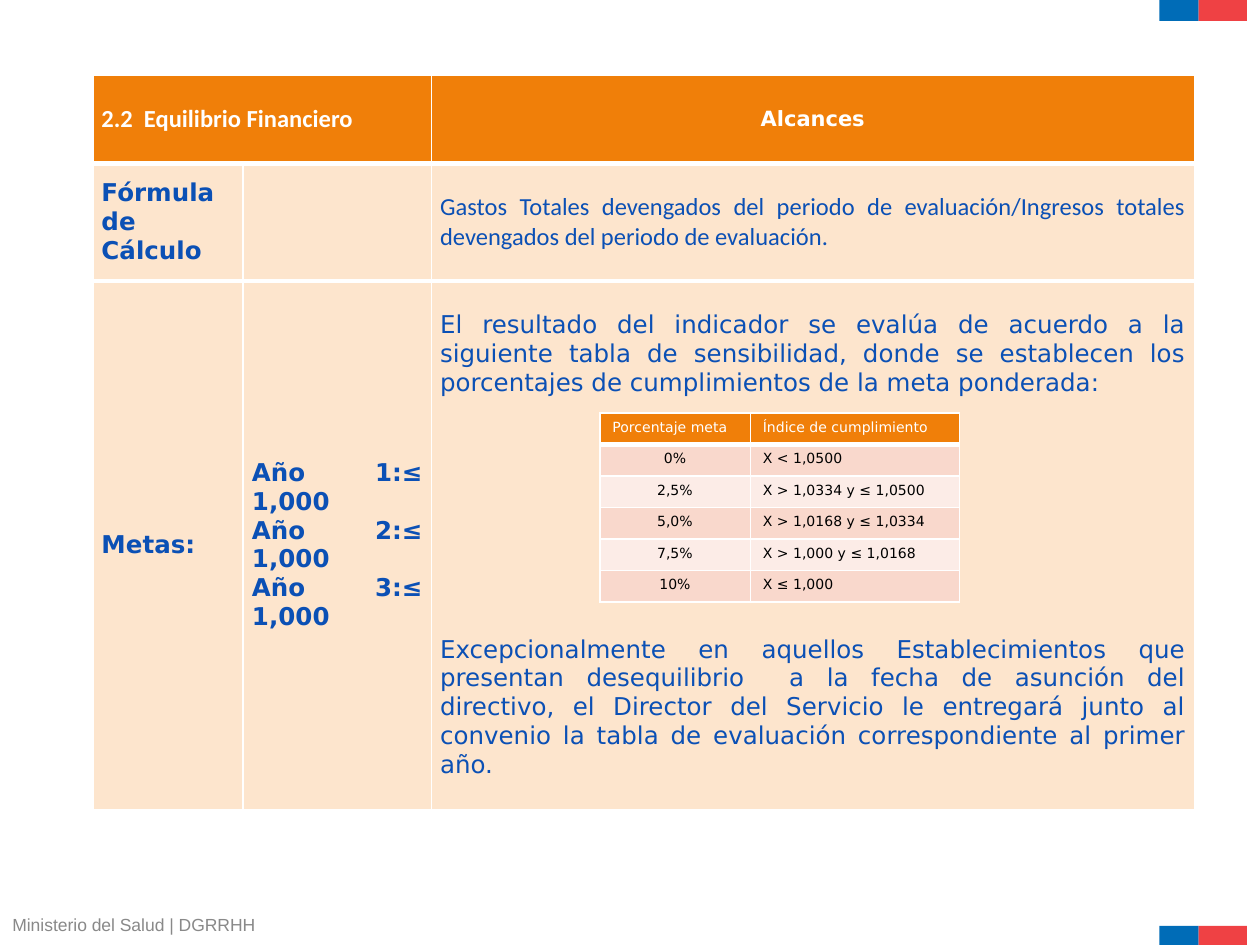
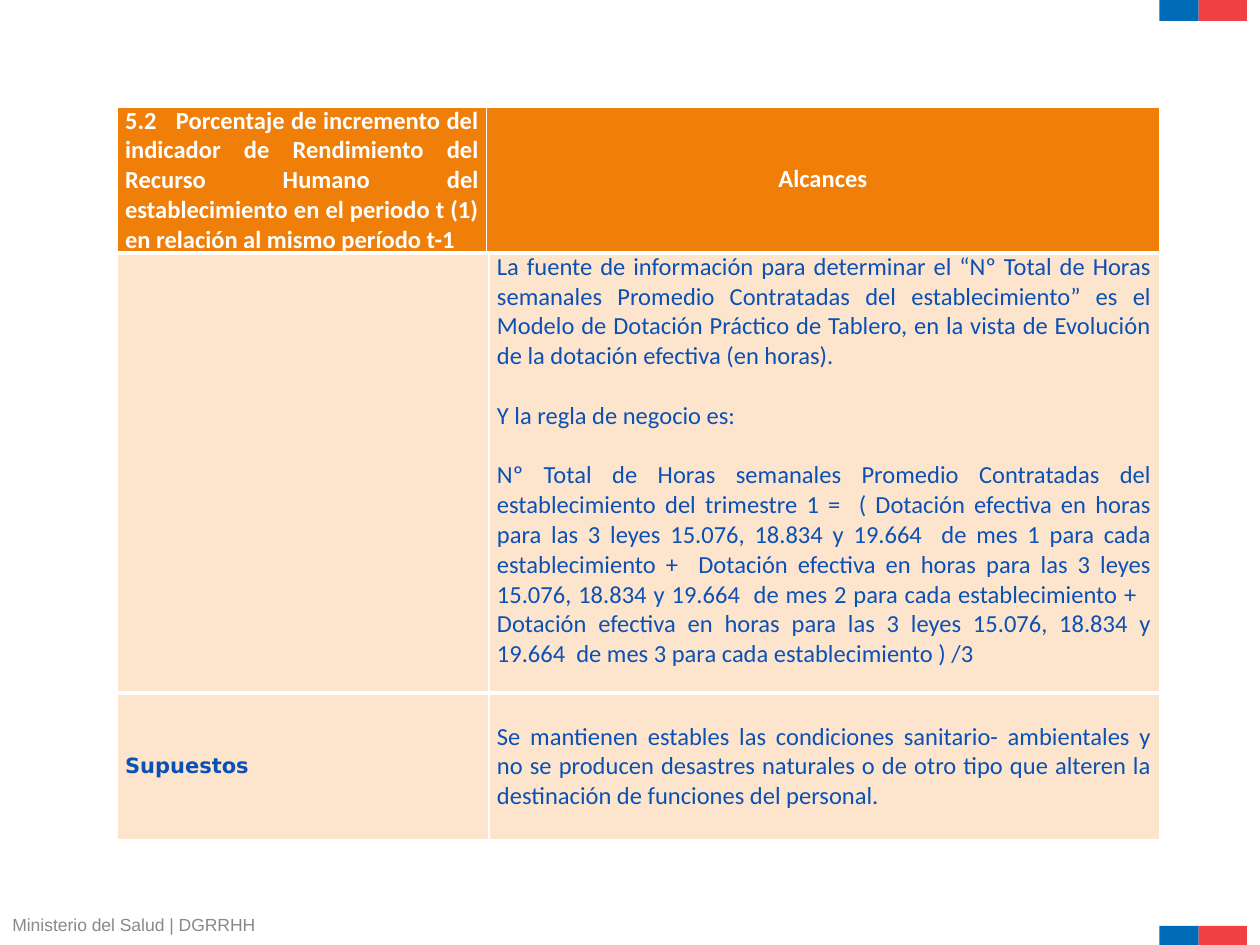
from lxml.etree import SubElement as Sub
from pptx import Presentation as Deck
from pptx.dml.color import RGBColor as Rgb
from pptx.enum.shapes import MSO_SHAPE as Shape
from pptx.enum.text import MSO_ANCHOR as Anchor, PP_ALIGN as Align
from pptx.oxml import parse_xml
from pptx.oxml.ns import nsdecls, qn
from pptx.util import Pt

HUES = {
    "blue": "006CB7", "red": "EF4144", "gray": "898989",
    "head": "F07F09", "cream": "FDE5CD", "ink": "0B50B5",
    "white": "FFFFFF", "black": "000000",
    "rose": "F9D8CC", "blush": "FCECE7",
}
SANS, SERIF = "DejaVu Sans", "Calibri"

# Text styles: font, size, weight, colour and alignment
HEAD = dict(name=SERIF, size=14, bold=True, hue="white", align=Align.LEFT)
BODY = dict(name=SERIF, size=14, bold=False, hue="ink", align=Align.JUSTIFY)
WIDE = BODY | dict(name=SANS)
LABEL = WIDE | dict(bold=True, align=Align.LEFT)
GOAL = LABEL | dict(align=Align.JUSTIFY)
SMALL = dict(name=SANS, size=8, bold=False, hue="black", align=Align.LEFT)
FOOT = dict(name="Arial", size=10, bold=False, hue="gray", align=Align.LEFT)

# Slide 1 wording
FORMULA = ("Gastos Totales devengados del periodo de evaluación/Ingresos "
           "totales devengados del periodo de evaluación.")
SCALE = ("El resultado del indicador se evalúa de acuerdo a la siguiente tabla "
         "de sensibilidad, donde se establecen los porcentajes de "
         "cumplimientos de la meta ponderada:")
EXCEPT = ("Excepcionalmente en aquellos Establecimientos que presentan "
          "desequilibrio  a la fecha de asunción del directivo, el Director "
          "del Servicio le entregará junto al convenio la tabla de evaluación "
          "correspondiente al primer año.")
GOALS = [f"Año {year}:≤ 1,000" for year in (1, 2, 3)]
LEVELS = [
    ("Porcentaje meta", "Índice de cumplimiento"),
    ("0%", "X < 1,0500"),
    ("2,5%", "X > 1,0334 y ≤ 1,0500"),
    ("5,0%", "X > 1,0168 y ≤ 1,0334"),
    ("7,5%", "X > 1,000 y ≤ 1,0168"),
    ("10%", "X ≤ 1,000"),
]

# Slide 2 wording
TOPIC = ("5.2   Porcentaje de incremento del indicador de Rendimiento del "
         "Recurso Humano del establecimiento en el periodo t (1) en relación "
         "al mismo período t-1")
SOURCE = ("La fuente de información para determinar el “Nº Total de Horas "
          "semanales Promedio Contratadas del establecimiento” es el Modelo de "
          "Dotación Práctico de Tablero, en la vista de Evolución de la "
          "dotación efectiva (en horas).")
RULE = "Y la regla de negocio es:"
STAFF = ("Dotación efectiva en horas para las 3 leyes 15.076, 18.834 y 19.664  "
         "de mes {} para cada establecimiento ")
HOURS = ("Nº Total de Horas semanales Promedio Contratadas del establecimiento "
         "del trimestre 1 =  ( " + STAFF.format(1) + "+  " + STAFF.format(2)
         + "+   " + STAFF.format(3) + ") /3")
STABLE = ("Se mantienen estables las condiciones sanitario- ambientales y no se "
          "producen desastres naturales o de otro tipo que alteren la "
          "destinación de funciones del personal.")


def tint(fill, hue):
    fill.solid()
    fill.fore_color.rgb = Rgb.from_string(HUES[hue])


def write(frame, lines, style, gap=0):
    """Fill a text frame; gap is the space before every later paragraph."""
    for i, line in enumerate(lines):
        para = frame.paragraphs[0] if i == 0 else frame.add_paragraph()
        para.alignment = style["align"]
        para.space_before = Pt(gap if i else 0)
        run = para.add_run()
        run.text = line
        form = {"name": style["name"], "size": Pt(style["size"]),
                "bold": style["bold"]}
        for key, val in form.items():
            setattr(run.font, key, val)
        run.font.color.rgb = Rgb.from_string(HUES[style["hue"]])


def edge(cell, top, base):
    """Draw white borders, with their widths in points."""
    props = cell._tc.get_or_add_tcPr()
    sides = {"lnL": 1, "lnR": 1, "lnT": top, "lnB": base}
    for i, (side, width) in enumerate(sides.items()):
        line = parse_xml(f'<a:{side} {nsdecls("a")} w="{Pt(width)}"/>')
        fill = Sub(line, qn("a:solidFill"))
        Sub(fill, qn("a:srgbClr"), val=HUES["white"])
        props.insert(i, line)


def grid(slide, left, top, cols, rows, fills, thick):
    """Add a table; thick lists the row borders that are 3 points wide."""
    table = slide.shapes.add_table(
        len(rows), len(cols), Pt(left), Pt(top),
        Pt(sum(cols)), Pt(sum(rows))).table
    table.first_row = table.horz_banding = False
    for col, width in zip(table.columns, cols):
        col.width = Pt(width)
    for r, high in enumerate(rows):
        table.rows[r].height = Pt(high)
        for cell in table.rows[r].cells:
            tint(cell.fill, fills[r])
            edge(cell, *(3 if n in thick else 1 for n in (r, r + 1)))
    return table


def fit(table, side):
    """Set side margins, no top or bottom margin, and middle anchor."""
    form = {"margin_left": Pt(side), "margin_right": Pt(side),
            "margin_top": 0, "margin_bottom": 0,
            "vertical_anchor": Anchor.MIDDLE}
    for cell in table.iter_cells():
        for key, val in form.items():
            setattr(cell, key, val)


def put(table, row, col, lines, style, gap=0):
    write(table.cell(row, col).text_frame, lines, style, gap)


def bar(slide, left, top, width, hue):
    box = slide.shapes.add_shape(
        Shape.RECTANGLE, Pt(left), Pt(top), Pt(width), Pt(12))
    box.shadow.inherit = False
    box.line.fill.background()
    tint(box.fill, hue)


def page(deck):
    """Add a slide with its colour bands and footer."""
    slide = deck.slides.add_slide(deck.slide_layouts[6])
    for top in (0, 529):
        bar(slide, 662.5, top, 22.5, "blue")
        bar(slide, 685, top, 27.5, "red")
    note = slide.shapes.add_textbox(Pt(0), Pt(519), Pt(153), Pt(19.5))
    note.text_frame.word_wrap = False
    write(note.text_frame, ["Ministerio del Salud | DGRRHH"], FOOT)
    return slide


def levels(slide):
    """Add the sensitivity table."""
    fills = ["head"] + ["rose", "blush"] * 2 + ["rose"]
    table = grid(slide, 342.75, 236, [86, 119.5], [18] * 6, fills, {1})
    for r, pair in enumerate(LEVELS):
        for c, text in enumerate(pair):
            style = SMALL
            if r == 0:
                style = SMALL | dict(hue="white")
            elif c == 0:
                style = SMALL | dict(align=Align.CENTER)
            put(table, r, c, [text], style)


def finance(deck):
    """Slide 1: financial balance."""
    slide = page(deck)
    table = grid(slide, 53, 43, [86, 107.5, 436], [50.5, 67, 302],
                 ["head", "cream", "cream"], {1, 2})
    fit(table, 5)
    table.cell(0, 0).merge(table.cell(0, 1))
    put(table, 0, 0, ["2.2  Equilibrio Financiero"], HEAD)
    put(table, 0, 2, ["Alcances"],
        HEAD | dict(name=SANS, size=12, align=Align.CENTER))
    put(table, 1, 0, ["Fórmula de Cálculo"], LABEL)
    put(table, 1, 2, [FORMULA], BODY)
    put(table, 2, 0, ["Metas:"], LABEL)
    put(table, 2, 1, GOALS, GOAL)
    put(table, 2, 2, [SCALE, EXCEPT], WIDE, 136)
    levels(slide)


def staff(deck):
    """Slide 2: staff performance."""
    slide = page(deck)
    body = grid(slide, 67, 144, [212.5, 383], [252, 84],
                ["cream", "cream"], {1})
    fit(body, 4.5)
    body.cell(0, 1).vertical_anchor = Anchor.TOP
    put(body, 0, 1, [SOURCE, RULE, HOURS], BODY, 17)
    put(body, 1, 0, ["Supuestos"], LABEL | dict(size=12))
    put(body, 1, 1, [STABLE], BODY)

    head = grid(slide, 67, 60.5, [80.5, 130.5, 384.5], [84], ["head"], {0, 1})
    fit(head, 4.5)
    head.cell(0, 0).merge(head.cell(0, 1))
    put(head, 0, 0, [TOPIC], HEAD | dict(align=Align.JUSTIFY))
    put(head, 0, 2, ["Alcances"], HEAD | dict(align=Align.CENTER))


def main():
    deck = Deck()
    deck.slide_width, deck.slide_height = Pt(720), Pt(540)
    finance(deck)
    staff(deck)
    deck.save("out.pptx")


if __name__ == "__main__":
    main()
